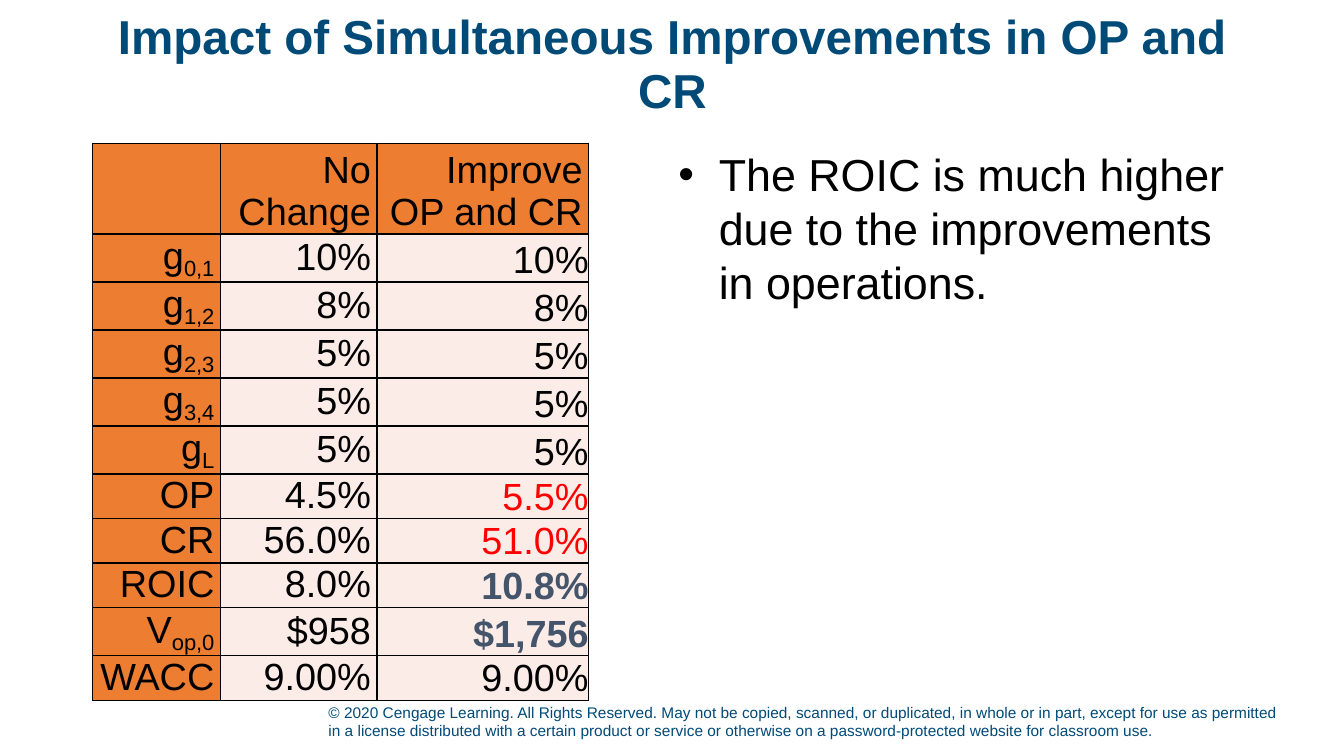
from lxml.etree import SubElement
from pptx import Presentation
from pptx.dml.color import RGBColor
from pptx.enum.text import MSO_ANCHOR, PP_ALIGN
from pptx.oxml.ns import qn
from pptx.util import Inches, Pt

NAVY = RGBColor(0x00, 0x4A, 0x78)
BLACK = RGBColor(0x00, 0x00, 0x00)
RED = RGBColor(0xFF, 0x00, 0x00)
SLATE = RGBColor(0x44, 0x54, 0x6A)
ORANGE = RGBColor(0xED, 0x7D, 0x31)
BLUSH = RGBColor(0xFC, 0xEC, 0xE8)

# Label (subscript after "_"), no change, improved, colour of improved value
TABLE_ROWS = [
    ("", "No Change", "Improve OP and CR", BLACK),
    ("g_0,1", "10%", "10%", BLACK),
    ("g_1,2", "8%", "8%", BLACK),
    ("g_2,3", "5%", "5%", BLACK),
    ("g_3,4", "5%", "5%", BLACK),
    ("g_L", "5%", "5%", BLACK),
    ("OP", "4.5%", "5.5%", RED),
    ("CR", "56.0%", "51.0%", RED),
    ("ROIC", "8.0%", "10.8%", SLATE),
    ("V_op,0", "$958", "$1,756", SLATE),
    ("WACC", "9.00%", "9.00%", BLACK),
]
COLUMN_WIDTHS = (9.5, 11.65, 15.75)
HEADER_HEIGHT, ROW_HEIGHT = 11.87, 5.87


def write_text(frame, text, size=27, color=BLACK, bold=False,
               align=PP_ALIGN.LEFT, anchor=MSO_ANCHOR.TOP, line_spacing=None):
    """Fill a text frame; whatever follows an underscore is a subscript."""
    frame.word_wrap = True
    frame.vertical_anchor = anchor
    paragraph = frame.paragraphs[0]
    paragraph.alignment = align
    paragraph.line_spacing = line_spacing
    for index, part in enumerate(text.split("_")):
        run = paragraph.add_run()
        run.text = part
        run.font.name = "Arial"
        run.font.size = Pt(size)
        run.font.bold = bold
        run.font.color.rgb = color
        if index:
            run.font._element.set("baseline", "-18000")
    return paragraph


class SlideBuilder:
    """Places elements on a grid of 100 columns by 100 rows."""

    def __init__(self, presentation):
        self.column = presentation.slide_width / 100
        self.row = presentation.slide_height / 100
        self.slide = presentation.slides.add_slide(presentation.slide_layouts[6])

    def across(self, columns):
        return round(columns * self.column)

    def down(self, rows):
        return round(rows * self.row)

    def text(self, left, top, width, height, text, **text_format):
        box = self.slide.shapes.add_textbox(
            self.across(left), self.down(top), self.across(width), self.down(height))
        return write_text(box.text_frame, text, **text_format)

    def bullet(self, left, top, width, height, text, **text_format):
        paragraph = self.text(left, top, width, height, text, **text_format)
        properties = paragraph._p.get_or_add_pPr()
        properties.set("marL", str(Inches(0.4)))
        properties.set("indent", str(Inches(-0.4)))
        SubElement(properties, qn("a:buFont"), typeface="Arial")
        SubElement(properties, qn("a:buChar"), char="•")
        paragraph.space_after = Pt(6)

    def border(self, cell):
        properties = cell._tc.get_or_add_tcPr()
        for position, side in enumerate(("a:lnL", "a:lnR", "a:lnT", "a:lnB")):
            line = SubElement(properties, qn(side), w=str(Pt(1)))
            fill = SubElement(line, qn("a:solidFill"))
            SubElement(fill, qn("a:srgbClr"), val=str(BLACK))
            properties.insert(position, line)

    def cell(self, cell, text, fill, inset, **text_format):
        cell.margin_left = cell.margin_right = Inches(inset)
        cell.margin_top = cell.margin_bottom = 0
        cell.fill.solid()
        cell.fill.fore_color.rgb = fill
        self.border(cell)
        anchor = text_format.pop("anchor")
        write_text(cell.text_frame, text, align=PP_ALIGN.RIGHT, **text_format)
        cell.vertical_anchor = anchor

    def table(self, left, top, rows):
        height = HEADER_HEIGHT + ROW_HEIGHT * (len(rows) - 1)
        table = self.slide.shapes.add_table(
            len(rows), len(COLUMN_WIDTHS), self.across(left), self.down(top),
            self.across(sum(COLUMN_WIDTHS)), self.down(height)).table
        for column, width in zip(table.columns, COLUMN_WIDTHS):
            column.width = self.across(width)
        for row_index, (*texts, improved_color) in enumerate(rows):
            header = row_index == 0
            table.rows[row_index].height = self.down(
                HEADER_HEIGHT if header else ROW_HEIGHT)
            for column_index, text in enumerate(texts):
                improved = column_index == 2
                self.cell(
                    table.cell(row_index, column_index), text,
                    fill=ORANGE if header or column_index == 0 else BLUSH,
                    inset=0 if improved and not header else 0.06,
                    anchor=MSO_ANCHOR.BOTTOM if header or improved else MSO_ANCHOR.MIDDLE,
                    color=improved_color if improved else BLACK,
                    bold=improved and improved_color == SLATE,
                    line_spacing=None if header else 0.98)


def main():
    presentation = Presentation()
    presentation.slide_width = Inches(13.33)
    presentation.slide_height = Inches(7.5)
    builder = SlideBuilder(presentation)

    # Copyright line
    builder.text(
        23.7, 91.87, 72.25, 6.67,
        "© 2020 Cengage Learning. All Rights Reserved. May not be copied, scanned, "
        "or duplicated, in whole or in part, except for use as permitted in a license "
        "distributed with a certain product or service or otherwise on a "
        "password-protected website for classroom use.",
        size=11, color=NAVY, anchor=MSO_ANCHOR.BOTTOM)

    # Title
    builder.text(
        6.9, 2, 86.27, 13.33, "Impact of Simultaneous Improvements in OP and CR",
        size=34, color=NAVY, bold=True, align=PP_ALIGN.CENTER,
        anchor=MSO_ANCHOR.MIDDLE, line_spacing=0.95)

    # Comparison table
    builder.table(6.9, 18.93, TABLE_ROWS)

    # Takeaway
    builder.bullet(
        49.74, 18.75, 43.36, 71.47,
        "The ROIC is much higher due to the improvements in operations.", size=32)

    presentation.save("out.pptx")


if __name__ == "__main__":
    main()
